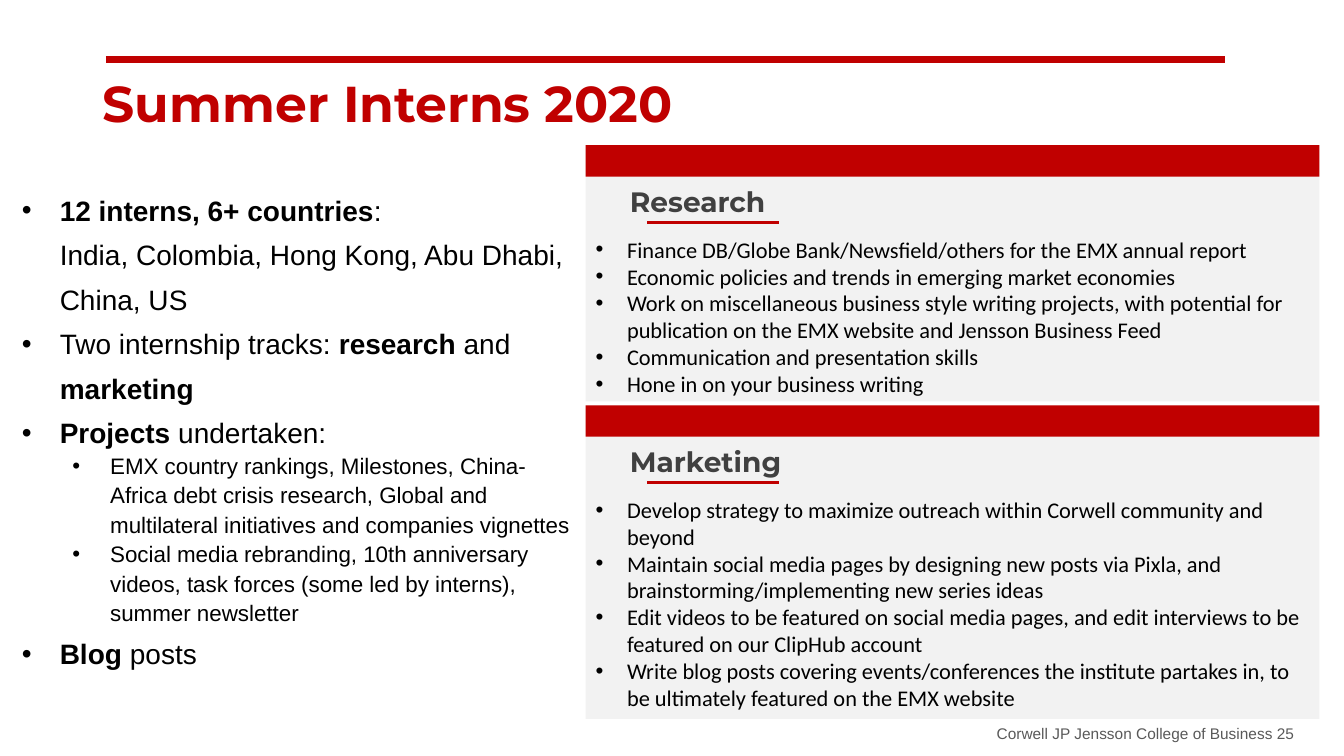
from dataclasses import dataclass

from lxml import etree
from pptx import Presentation
from pptx import util as u
from pptx.dml.color import RGBColor
from pptx.enum import shapes, text
from pptx.oxml import ns

Pt = u.Pt


@dataclass(frozen=True)
class Theme:
    red: str = "C00000"
    pale: str = "F2F2F2"
    gray: str = "404040"
    foot: str = "595959"
    ink: str = "000000"
    display: str = "Montserrat"
    sans: str = "Arial"
    body: str = "Calibri"
    title: float = 36
    large: float = 20
    small: float = 16
    tiny: float = 11


@dataclass(frozen=True)
class Style:
    face: str
    size: float
    color: str
    bold: bool = False
    indent: float = 0
    hang: float = 0
    pitch: float = 0
    level: int = 0


@dataclass(frozen=True)
class Box:
    left: float
    top: float
    width: float
    height: float


@dataclass(frozen=True)
class Item:
    words: str  # asterisks enclose bold words
    style: Style


@dataclass(frozen=True)
class Panel:
    name: str
    top: float
    height: float
    points: tuple[str, ...]


T = Theme()
TITLE = Style(T.display, T.title, T.red, True)
HEAD = Style(T.display, T.large, T.gray, True)
POINT = Style(T.body, T.small, T.ink, indent=22.5, hang=22.5)
MAIN = Style(T.sans, T.large, T.ink, indent=27, hang=27, pitch=31.8)
SUB = Style(T.sans, T.small, T.ink, indent=63, hang=27, pitch=21, level=1)
FOOT = Style(T.sans, T.tiny, T.foot)

ITEMS = [
    Item("*12 interns, 6+ countries*:\nIndia, Colombia, Hong Kong, Abu Dhabi, China, US", MAIN),
    Item("Two internship tracks: *research* and *marketing*", MAIN),
    Item("*Projects* undertaken:", MAIN),
    Item("EMX country rankings, Milestones, China-Africa debt crisis research, "
         "Global and multilateral initiatives and companies vignettes", SUB),
    Item("Social media rebranding, 10th anniversary videos, task forces "
         "(some led by interns), summer newsletter", SUB),
    Item("*Blog* posts", MAIN),
]

PANELS = [
    Panel("Research", 103.7, 183, (
        "Finance DB/Globe Bank/Newsfield/others for the EMX annual report",
        "Economic policies and trends in emerging market economies",
        "Work on miscellaneous business style writing projects, with potential for "
        "publication on the EMX website and Jensson Business Feed",
        "Communication and presentation skills",
        "Hone in on your business writing",
    )),
    Panel("Marketing", 289.5, 224, (
        "Develop strategy to maximize outreach within Corwell community and beyond",
        "Maintain social media pages by designing new posts via Pixla, and "
        "brainstorming/implementing new series ideas",
        "Edit videos to be featured on social media pages, and edit interviews to be "
        "featured on our ClipHub account",
        "Write blog posts covering events/conferences the institute partakes in, to "
        "be ultimately featured on the EMX website",
    )),
]


def place(shape, box: Box) -> None:
    shape.left, shape.top = Pt(box.left), Pt(box.top)
    shape.width, shape.height = Pt(box.width), Pt(box.height)


def dress(para, style: Style) -> None:
    """Set bullet, spacing and font of a paragraph."""
    if style.hang:
        props = para._p.get_or_add_pPr()
        props.set("marL", str(Pt(style.indent)))
        props.set("indent", str(-Pt(style.hang)))
        font = etree.SubElement(props, ns.qn("a:buFont"))
        font.set("typeface", T.sans)
        etree.SubElement(props, ns.qn("a:buChar")).set("char", "•")
    para.level = style.level
    if style.pitch:
        para.line_spacing = Pt(style.pitch)
    para.font.name = style.face
    para.font.size = Pt(style.size)
    para.font.bold = style.bold
    para.font.color.rgb = RGBColor.from_string(style.color)


def fill(para, item: Item) -> None:
    dress(para, item.style)
    for i, part in enumerate(item.words.split("*")):
        for j, line in enumerate(part.split("\n")):
            if j:
                para.add_line_break()
            if line:
                run = para.add_run()
                run.text = line
                if i % 2:
                    run.font.bold = True


def write(slide, box: Box, items: list[Item]):
    frame = slide.shapes.add_textbox(
        Pt(box.left), Pt(box.top), Pt(box.width), Pt(box.height)).text_frame
    frame.word_wrap = True
    for i, item in enumerate(items):
        fill(frame.add_paragraph() if i else frame.paragraphs[0], item)
    return frame


def block(slide, box: Box, color: str) -> None:
    rect = slide.shapes.add_shape(
        shapes.MSO_SHAPE.RECTANGLE,
        Pt(box.left), Pt(box.top), Pt(box.width), Pt(box.height))
    rect.shadow.inherit = False
    rect.fill.solid()
    rect.fill.fore_color.rgb = RGBColor.from_string(color)
    rect.line.fill.background()


def rule(slide, left: float, right: float, top: float, weight: float) -> None:
    line = slide.shapes.add_connector(
        shapes.MSO_CONNECTOR.STRAIGHT, Pt(left), Pt(top), Pt(right), Pt(top))
    line.line.color.rgb = RGBColor.from_string(T.red)
    line.line.width = Pt(weight)
    etree.SubElement(line._element.spPr, ns.qn("a:effectLst"))


def draw(slide, panel: Panel) -> None:
    left, width, top = 418.3, 524.2, panel.top
    block(slide, Box(left, top, width, panel.height), T.pale)
    block(slide, Box(left, top, width, 22.5), T.red)
    write(slide, Box(442.8, top + 24.8, 459.4, 31), [Item(panel.name, HEAD)])
    write(slide, Box(left, top + 61.2, width, panel.height - 61.2),
          [Item(point, POINT) for point in panel.points])
    rule(slide, 462.2, 556.6, top + 55.4, 2.25)


def main() -> None:
    deck = Presentation()
    deck.slide_width, deck.slide_height = Pt(960), Pt(540)
    slide = deck.slides.add_slide(deck.slide_layouts[5])

    # Title
    title = slide.shapes.title
    place(title, Box(66.2, 52.6, 865.4, 61.2))
    frame = title.text_frame
    frame.auto_size = text.MSO_AUTO_SIZE.NONE
    frame.vertical_anchor = text.MSO_ANCHOR.TOP
    para = frame.paragraphs[0]
    fill(para, Item("Summer Interns 2020", TITLE))
    para.alignment = text.PP_ALIGN.LEFT
    para.line_spacing = 0.9
    rule(slide, 75.6, 874.8, 42.5, 5)

    # Overview
    write(slide, Box(8.6, 126.7, 409.7, 252), ITEMS)

    # Tracks
    for panel in PANELS:
        draw(slide, panel)

    # Footer
    foot = write(slide, Box(666.7, 513.4, 265, 28.8),
                 [Item("Corwell JP Jensson College of Business 25", FOOT)])
    foot.paragraphs[0].alignment = text.PP_ALIGN.RIGHT

    deck.save("out.pptx")


if __name__ == "__main__":
    main()
